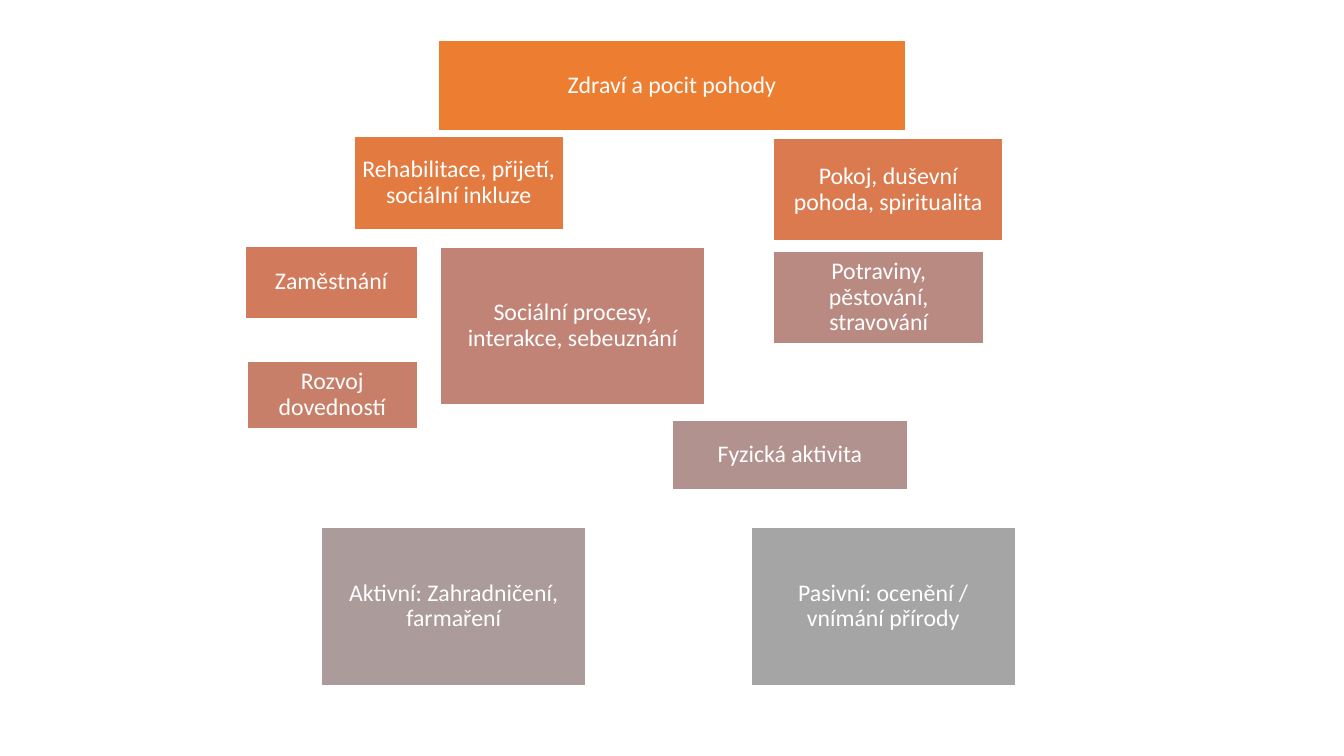
from pptx import Presentation
from pptx.dml.color import RGBColor
from pptx.enum.shapes import MSO_SHAPE
from pptx.enum.text import MSO_ANCHOR, PP_ALIGN
from pptx.util import Inches, Pt

WHITE = RGBColor(0xFF, 0xFF, 0xFF)
ORANGE = RGBColor(0xED, 0x7D, 0x31)
AMBER = RGBColor(0xE3, 0x7A, 0x40)
CORAL = RGBColor(0xDA, 0x7A, 0x4E)
TERRACOTTA = RGBColor(0xD1, 0x7B, 0x5C)
CLAY = RGBColor(0xC8, 0x7F, 0x69)
ROSE = RGBColor(0xC0, 0x83, 0x76)
DUSTY_ROSE = RGBColor(0xB9, 0x8A, 0x82)
MAUVE = RGBColor(0xB2, 0x92, 0x8E)
WARM_GRAY = RGBColor(0xAB, 0x9B, 0x9A)
GRAY = RGBColor(0xA5, 0xA5, 0xA5)

LARGE_BOX = (2.62, 1.57)

BOXES = [
    ("Zdraví a pocit pohody", (4.35, 0.4), (4.63, 0.9), ORANGE),
    ("Rehabilitace, přijetí, sociální inkluze", (3.51, 1.35), (2.08, 0.93), AMBER),
    ("Pokoj, duševní pohoda, spiritualita", (7.67, 1.37), (2.28, 1.02), CORAL),
    ("Zaměstnání", (2.43, 2.44), (1.71, 0.72), TERRACOTTA),
    ("Rozvoj dovedností", (2.45, 3.58), (1.69, 0.67), CLAY),
    ("Sociální procesy, interakce, sebeuznání", (4.37, 2.45), LARGE_BOX, ROSE),
    ("Potraviny, pěstování, stravování", (7.67, 2.49), (2.09, 0.92), DUSTY_ROSE),
    ("Fyzická aktivita", (6.67, 4.17), (2.33, 0.69), MAUVE),
    ("Aktivní: Zahradničení, farmaření", (3.19, 5.23), LARGE_BOX, WARM_GRAY),
    ("Pasivní: ocenění / vnímání přírody", (7.45, 5.23), LARGE_BOX, GRAY),
]


def add_box(slide, text, *, position, size, fill, font="Calibri", points=17, color=WHITE):
    shape = slide.shapes.add_shape(
        MSO_SHAPE.RECTANGLE, *(Inches(length) for length in position + size)
    )
    shape.shadow.inherit = False
    shape.fill.solid()
    shape.fill.fore_color.rgb = fill
    shape.line.color.rgb = WHITE
    shape.line.width = Pt(1)

    frame = shape.text_frame
    frame.word_wrap = True
    frame.vertical_anchor = MSO_ANCHOR.MIDDLE
    frame.margin_left = frame.margin_right = Inches(0.07)
    frame.margin_top = frame.margin_bottom = Inches(0.07)

    paragraph = frame.paragraphs[0]
    paragraph.text = text
    paragraph.alignment = PP_ALIGN.CENTER
    paragraph.line_spacing = 0.9
    paragraph.font.name = font
    paragraph.font.size = Pt(points)
    paragraph.font.color.rgb = color


def main():
    presentation = Presentation()
    presentation.slide_width = Inches(13.33)
    presentation.slide_height = Inches(7.5)
    slide = presentation.slides.add_slide(presentation.slide_layouts[6])
    for text, position, size, fill in BOXES:
        add_box(slide, text, position=position, size=size, fill=fill)
    presentation.save("out.pptx")


if __name__ == "__main__":
    main()
